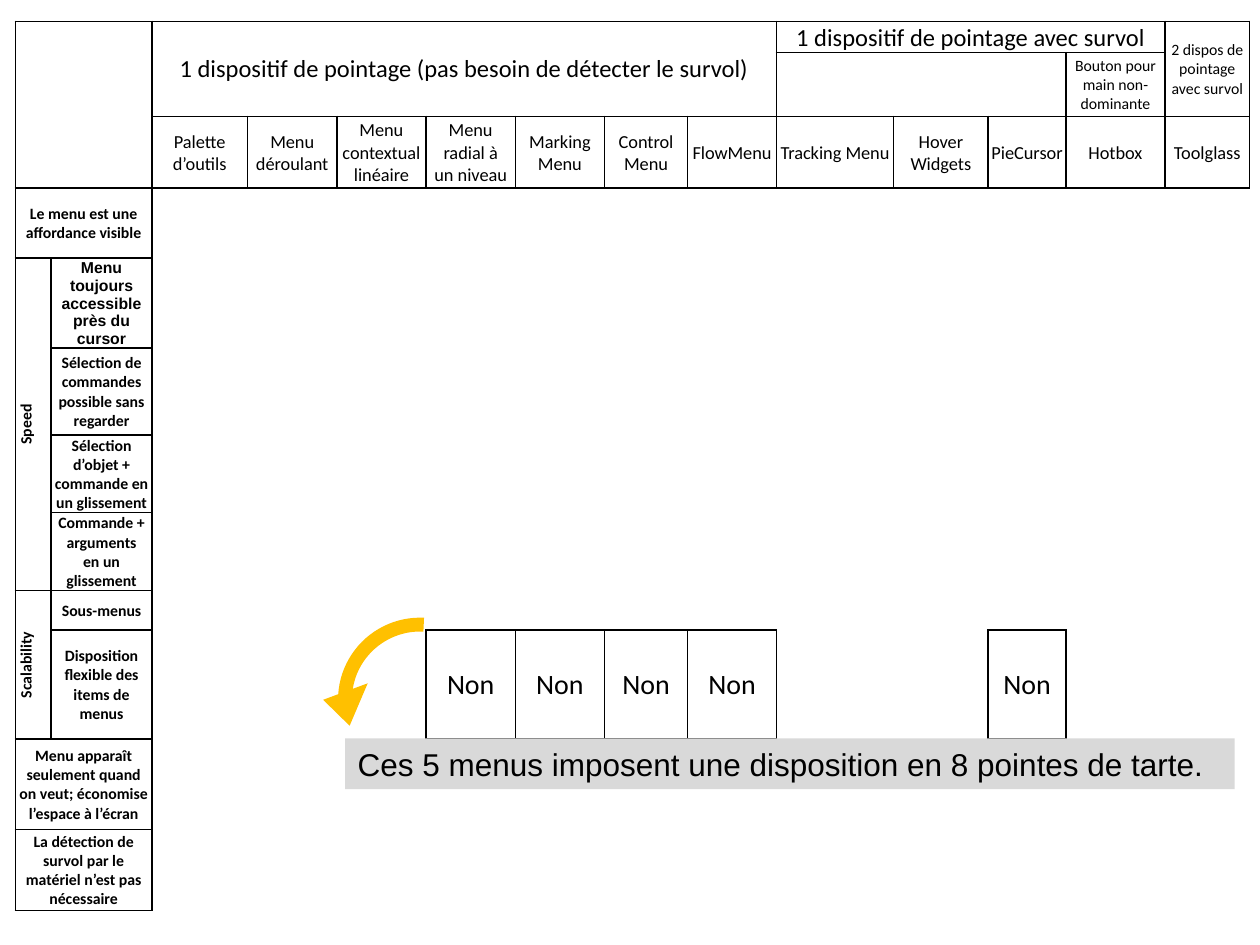
from collections import defaultdict

from lxml.etree import SubElement
from pptx import Presentation
from pptx.dml.color import RGBColor
from pptx.enum.shapes import MSO_SHAPE
from pptx.enum.text import MSO_ANCHOR, MSO_AUTO_SIZE, PP_ALIGN
from pptx.oxml import parse_xml
from pptx.oxml.ns import nsdecls, qn
from pptx.util import Pt

COLUMN_WIDTHS = [20.5, 57.5, 54.75, 51, 51, 51, 51, 47.5, 50.75, 67, 54, 44.5, 56.5, 48.5]
ROW_HEIGHTS = [17.5, 36.5, 41, 40, 51.5, 49.5, 44.5, 44, 22.5, 62.5, 51.5, 46.5]
NO_GRID_STYLE = "{2D5ABB26-0587-4C30-8999-92F81FD0307C}"
SIDES = {"lnL": (0, -1, "lnR"), "lnR": (0, 1, "lnL"), "lnT": (-1, 0, "lnB"), "lnB": (1, 0, "lnT")}
SOLID_LINE = '<a:solidFill><a:srgbClr val="000000"/></a:solidFill>'
NO_LINE = "<a:noFill/>"

MENUS = [
    "Palette d’outils", "Menu déroulant", "Menu contextual linéaire", "Menu radial à\nun niveau",
    "Marking Menu", "Control Menu", "FlowMenu", "Tracking Menu", "Hover Widgets", "PieCursor",
    "Hotbox", "Toolglass",
]
HEADINGS = [
    (0, 0, 3, 2, "", {}),
    (0, 2, 2, 7, "1 dispositif de pointage (pas besoin de détecter le survol)", {"size": 14}),
    (0, 9, 1, 4, "1 dispositif de pointage avec survol", {"size": 14}),
    (0, 13, 2, 1, "2 dispos de pointage avec survol", {"size": 9}),
    (1, 9, 1, 3, "", {}),
    (1, 12, 1, 1, "Bouton pour main non-dominante", {"size": 9}),
]
CRITERIA = [
    (3, 0, 1, 2, "Le menu est une affordance visible", {}),
    (4, 0, 4, 1, "Speed", {}),
    (4, 1, 1, 1, "Menu toujours accessible près du cursor", {"font": "Arial"}),
    (5, 1, 1, 1, "Sélection de commandes possible sans regarder", {}),
    (6, 1, 1, 1, "Sélection d’objet + commande en un glissement", {}),
    (7, 1, 1, 1, "Commande + arguments\ven un glissement", {}),
    (8, 0, 2, 1, "Scalability", {}),
    (8, 1, 1, 1, "Sous-menus", {}),
    (9, 1, 1, 1, "Disposition flexible des items de menus", {}),
    (10, 0, 1, 2, "Menu apparaît seulement quand on veut; économise l’espace à l’écran", {}),
    (11, 0, 1, 2, "La détection de survol par le matériel n’est pas nécessaire", {}),
]
PIE_MENU_COLUMNS = [5, 6, 7, 8, 11]


def color(value):
    """Return the colour for a hex string."""
    return RGBColor.from_string(value)


def write_text(text_frame, text, size=10.5, font="Calibri", bold=False,
               fill="000000", align=PP_ALIGN.CENTER):
    """Write formatted text into a text frame."""
    text_frame.text = text
    for paragraph in text_frame.paragraphs:
        paragraph.alignment = align
        for run in paragraph.runs:
            run.font.size = Pt(size)
            run.font.name = font
            run.font.bold = bold
            run.font.color.rgb = color(fill)


def add_grid(slide):
    """Add the empty, unstyled table."""
    frame = slide.shapes.add_table(
        len(ROW_HEIGHTS), len(COLUMN_WIDTHS), Pt(8.75), Pt(12.25),
        Pt(sum(COLUMN_WIDTHS)), Pt(sum(ROW_HEIGHTS)))
    table = frame.table
    table.first_row = table.horz_banding = False
    table._tbl.tblPr.find(qn("a:tableStyleId")).text = NO_GRID_STYLE
    for column, width in zip(table.columns, COLUMN_WIDTHS):
        column.width = Pt(width)
    for row, height in zip(table.rows, ROW_HEIGHTS):
        row.height = Pt(height)
    for cell in table.iter_cells():
        cell.fill.background()
        cell.vertical_anchor = MSO_ANCHOR.MIDDLE
        cell.margin_left = cell.margin_right = cell.margin_top = Pt(0.72)
        cell.margin_bottom = 0
        SubElement(cell.text_frame.paragraphs[0]._p, qn("a:endParaRPr"), sz="900")
    return table


def fill_cell(table, edges, row, column, rows, columns, text, **style):
    """Merge and fill a block of cells and record its outline."""
    cell = table.cell(row, column)
    last_row, last_column = row + rows - 1, column + columns - 1
    if rows * columns > 1:
        cell.merge(table.cell(last_row, last_column))
    if text:
        write_text(cell.text_frame, text, **style)
    for line in range(row, last_row + 1):
        add_edge(edges, line, column, "lnL")
        add_edge(edges, line, last_column, "lnR")
    for position in range(column, last_column + 1):
        add_edge(edges, row, position, "lnT")
        add_edge(edges, last_row, position, "lnB")
    return cell


def add_edge(edges, row, column, side):
    """Record one border on a cell and on the neighbour that shares it."""
    down, right, opposite = SIDES[side]
    edges[row, column].add(side)
    edges[row + down, column + right].add(opposite)


def draw_edges(table, edges):
    """Draw the recorded borders and clear all others."""
    for row in range(len(ROW_HEIGHTS)):
        for column in range(len(COLUMN_WIDTHS)):
            properties = table.cell(row, column)._tc.get_or_add_tcPr()
            for index, side in enumerate(SIDES):
                line = SOLID_LINE if side in edges[row, column] else NO_LINE
                properties.insert(index, parse_xml(
                    f'<a:{side} {nsdecls("a")} w="12700">{line}</a:{side}>'))


def add_comparison(slide):
    """Add the table comparing menus against criteria."""
    table = add_grid(slide)
    edges = defaultdict(set)
    for *block, text, style in HEADINGS:
        fill_cell(table, edges, *block, text, **style)
    for column, menu in enumerate(MENUS, start=2):
        fill_cell(table, edges, 2, column, 1, 1, menu)
    for row, column, rows, columns, text, style in CRITERIA:
        cell = fill_cell(table, edges, row, column, rows, columns, text,
                         size=9, bold=True, **style)
        if rows > 1:
            cell._tc.get_or_add_tcPr().set("vert", "vert270")
    for column in PIE_MENU_COLUMNS:
        fill_cell(table, edges, 9, column, 1, 1, "Non", size=16)
    draw_edges(table, edges)


def add_filled_shape(slide, kind, left, top, width, height, fill):
    """Add a plain shape without line or shadow."""
    shape = slide.shapes.add_shape(kind, Pt(left), Pt(top), Pt(width), Pt(height))
    shape.shadow.inherit = False
    shape.fill.solid()
    shape.fill.fore_color.rgb = color(fill)
    shape.line.fill.background()
    return shape


def add_remark(slide, text):
    """Add the grey remark under the answers."""
    shape = add_filled_shape(slide, MSO_SHAPE.RECTANGLE, 197.3, 421.9, 508.3, 29.1, "D9D9D9")
    shape.text_frame.word_wrap = True
    shape.text_frame.auto_size = MSO_AUTO_SIZE.SHAPE_TO_FIT_TEXT
    shape.text_frame.vertical_anchor = MSO_ANCHOR.TOP
    write_text(shape.text_frame, text, size=18, font="Arial", align=PP_ALIGN.LEFT)


def add_curved_arrow(slide):
    """Add the curved arrow from the answers to the remark."""
    arrow = add_filled_shape(slide, MSO_SHAPE.CIRCULAR_ARROW, 183.6, 343.4, 113, 113, "FFC000")
    for index, value in enumerate([0.07, 15.91, 205.35, 153.44, 0.12]):
        arrow.adjustments[index] = value
    arrow.rotation = 348.5
    arrow._element.spPr.find(qn("a:xfrm")).set("flipH", "1")


def main():
    """Build and save the slide."""
    presentation = Presentation()
    presentation.slide_width, presentation.slide_height = Pt(720), Pt(540)
    slide = presentation.slides.add_slide(presentation.slide_layouts[6])
    add_comparison(slide)
    add_remark(slide, "Ces 5 menus imposent une disposition en 8 pointes de tarte.")
    add_curved_arrow(slide)
    presentation.save("out.pptx")


if __name__ == "__main__":
    main()
